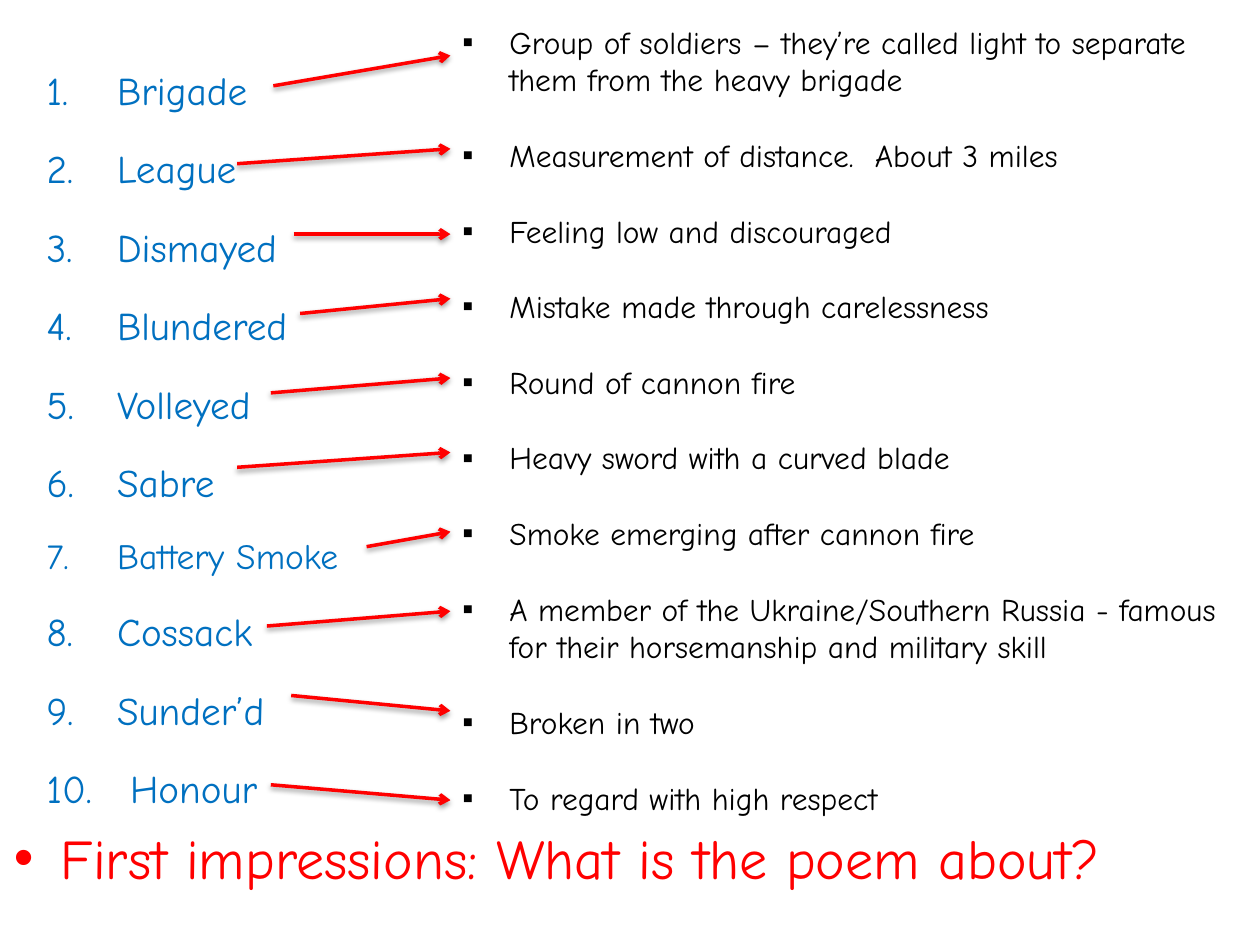
from collections import namedtuple

from lxml import etree
from pptx import Presentation
from pptx import util as u
from pptx.dml.color import RGBColor
from pptx.enum import shapes, text
from pptx.oxml import ns

Box = namedtuple("Box", "left top width height")

COLOURS = {"term": "0070C0", "meaning": "000000", "accent": "FF0000"}
FONT = "Comic Neue"

# term, size, meaning, arrow start x, arrow start y, arrow end y (cm in the gutter)
GLOSSARY = [
    ("Brigade", 22.4, "Group of soldiers – they’re called light to separate "
     "them from the heavy brigade", 0.73, 0.61, 0),
    ("League", 22.4, "Measurement of distance.  About 3 miles", 0, 2.18, 1.88),
    ("Dismayed", 22.4, "Feeling low and discouraged", 1.14, 3.6, 3.6),
    ("Blundered", 22.4, "Mistake made through carelessness", 1.27, 5.2, 4.9),
    ("Volleyed", 22.4, "Round of cannon fire", 0.68, 6.8, 6.5),
    ("Sabre", 22.4, "Heavy sword with a curved blade", 0, 8.3, 8),
    ("Battery Smoke", 20.3, "Smoke emerging after cannon fire", 2.61, 9.9, 9.6),
    ("Cossack", 22.4, "A member of the Ukraine/Southern Russia - famous "
     "for their horsemanship and military skill", 0.6, 11.5, 11.2),
    ("Sunder’d", 22.4, "Broken in two", 1.09, 12.9, 13.21),
    (" Honour", 22.4, "To regard with high respect", 0.68, 14.7, 15.01),
]


def add_child(parent, tag, **attributes):
    child = etree.SubElement(parent, ns.qn(tag))
    for name, value in attributes.items():
        child.set(name, str(value))
    return child


def add_list(page, box, items, colour, indent, bullet=None, **spacing):
    """Place (wording, size, space before) items; numbered unless a bullet is given."""
    frame = page.shapes.add_textbox(*map(u.Cm, box)).text_frame
    frame.word_wrap = True
    frame.vertical_anchor = text.MSO_ANCHOR.TOP
    for index, (wording, size, before) in enumerate(items):
        para = frame.add_paragraph() if index else frame.paragraphs[0]
        for name, value in {"space_before": u.Pt(before), **spacing}.items():
            setattr(para, name, value)
        properties = para._p.get_or_add_pPr()
        properties.set("marL", str(u.Cm(indent)))
        properties.set("indent", str(-u.Cm(indent)))
        if bullet:
            add_child(properties, "a:buFont", typeface="Arial")
            add_child(properties, "a:buChar", char=bullet)
        else:
            add_child(properties, "a:buFont", typeface=FONT)
            add_child(properties, "a:buAutoNum", type="arabicPeriod")
        span = para.add_run()
        span.text = wording
        for name, value in {"name": FONT, "size": u.Pt(size)}.items():
            setattr(span.font, name, value)
        span.font.color.rgb = RGBColor.from_string(COLOURS[colour])


def add_terms(page, box):
    items = [(term, size, size * 0.2) for term, size, *_ in GLOSSARY]
    add_list(page, box, items, "term", 1.42, line_spacing=1.5)


def add_meanings(page, box):
    items = [(row[2], 18, 21.6 if index else 0)
             for index, row in enumerate(GLOSSARY)]
    add_list(page, box, items, "meaning", 0.95, "▪")


def add_question(page, box):
    items = [("First impressions: What is the poem about?", 32, 6.4)]
    add_list(page, box, items, "accent", 0.95, "•")


def add_arrows(page, box):
    """Link each term to its meaning across the gutter."""
    for *_, start_x, start_y, end_y in GLOSSARY:
        arrow = page.shapes.add_connector(
            shapes.MSO_CONNECTOR.STRAIGHT,
            u.Cm(box.left + start_x), u.Cm(box.top + start_y),
            u.Cm(box.left + box.width), u.Cm(box.top + end_y))
        arrow.line.width = u.Pt(2)
        arrow.line.color.rgb = RGBColor.from_string(COLOURS["accent"])
        add_child(arrow.line._get_or_add_ln(), "a:tailEnd", type="arrow")
        effects = add_child(arrow._element.spPr, "a:effectLst")
        shadow = add_child(effects, "a:outerShdw", blurRad=u.Pt(3.1),
                           dist=u.Pt(1.6), dir=90 * 60000, rotWithShape=0)
        shade = add_child(shadow, "a:srgbClr", val="000000")
        add_child(shade, "a:alpha", val=38000)


def main():
    deck = Presentation()
    deck.slide_width, deck.slide_height = u.Cm(25.4), u.Cm(19.05)
    page = deck.slides.add_slide(deck.slide_layouts[6])
    add_terms(page, Box(0.69, 0.74, 8.41, 17.4))
    add_meanings(page, Box(9.07, 0.33, 16.33, 16.41))
    add_arrows(page, Box(4.78, 1.12, 4.3, 15.01))
    add_question(page, Box(0.03, 16.48, 24.79, 2.79))
    deck.save("out.pptx")


if __name__ == "__main__":
    main()
